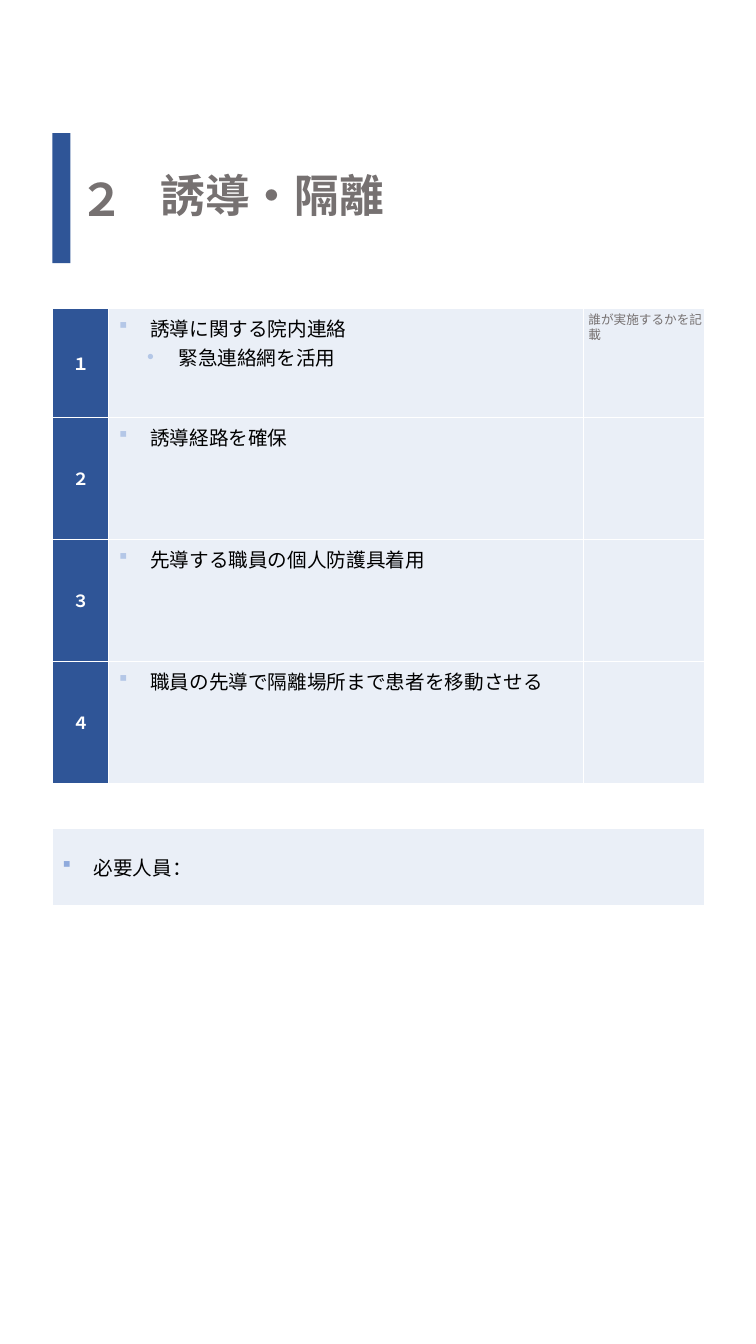
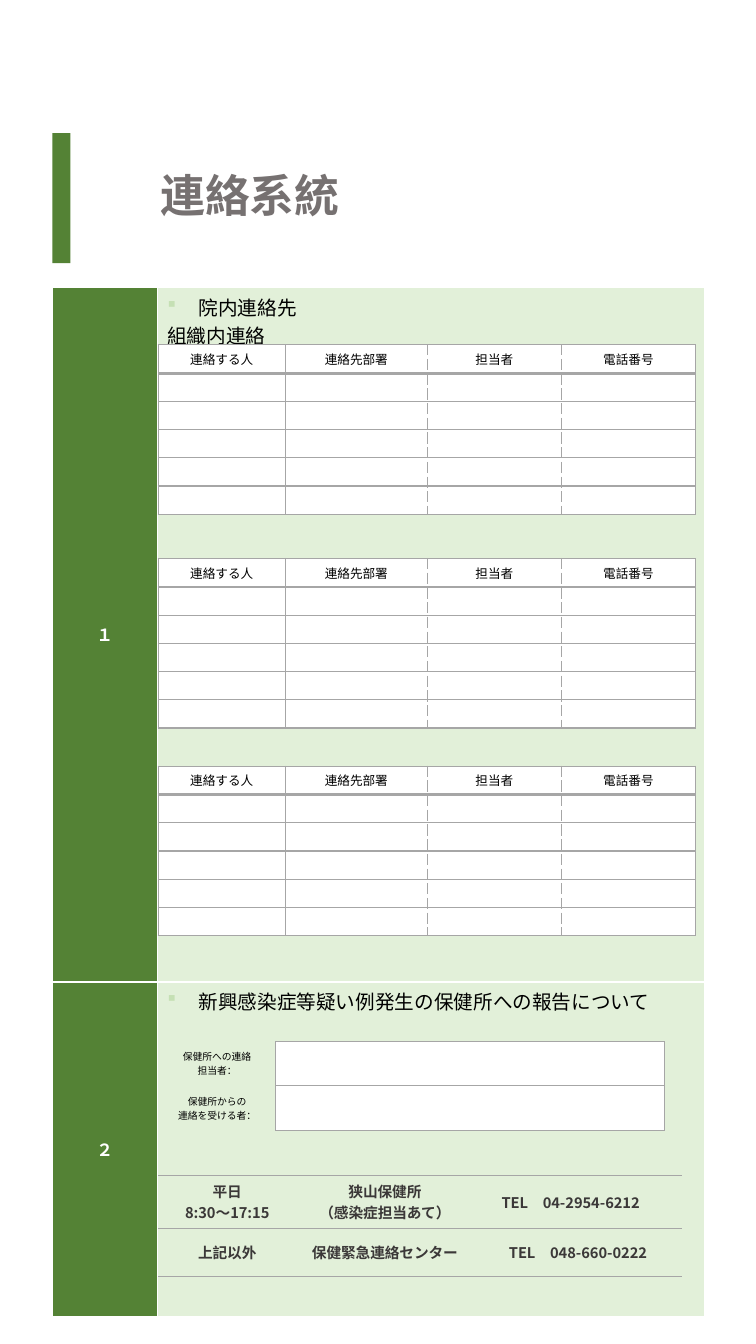
import itertools

import pptx
import pptx.dml.color
import pptx.enum.shapes
import pptx.enum.text
import pptx.oxml
import pptx.oxml.ns
import pptx.util

FONT = "Noto Sans CJK JP"
PAGE_W, PAGE_H = 7.5, 13.33
COLORS = {
    "white": "FFFFFF", "black": "000000", "heading": "767171", "office": "3B3838",
    "rule": "A6A6A6", "blue": "2F5597", "blue_pale": "EAEFF7", "blue_bullet": "B4C7E7",
    "staff_bullet": "8FAADC", "green": "548235", "green_pale": "E2F0D9",
    "green_bullet": "C5E0B4",
}
NO_STYLE = "{2D5ABB26-0587-4C30-8999-92F81FD0307C}"
SQUARE = ("§", "Wingdings", 0)
DOT = ("•", "Arial", 1)
LEFT = pptx.enum.text.PP_ALIGN.LEFT
CENTER = pptx.enum.text.PP_ALIGN.CENTER
TOP = pptx.enum.text.MSO_ANCHOR.TOP
MIDDLE = pptx.enum.text.MSO_ANCHOR.MIDDLE
CONTACT_HEADS = ("連絡する人", "連絡先部署", "担当者", "電話番号")
BLANK_CONTACTS = 5


def color(name):
    return pptx.dml.color.RGBColor.from_string(COLORS[name])


def inside(box, left, top, width, height):
    x, y, w, h = box
    return (x + w * left / 100, y + h * top / 100, w * width / 100, h * height / 100)


def emu(box):
    return [pptx.util.Inches(length) for length in box]


def add_xml(parent, tag, **attributes):
    child = pptx.oxml.parse_xml(f"<a:{tag} {pptx.oxml.ns.nsdecls('a')}/>")
    for key, value in attributes.items():
        child.set(key, str(value))
    parent.append(child)
    return child


def add_bullet(paragraph, bullet, tint):
    char, face, level = bullet
    paragraph.level = level
    props = paragraph._p.get_or_add_pPr()
    props.set("marL", str(pptx.util.Inches(0.31 + 0.28 * level)))
    props.set("indent", str(pptx.util.Inches(-0.31)))
    add_xml(add_xml(props, "buClr"), "srgbClr", val=COLORS[tint])
    add_xml(props, "buFont", typeface=face)
    add_xml(props, "buChar", char=char)


def write(frame, *lines, size=14, ink="black", bold=False, align=LEFT,
          bullets=(), tint=None, spacing=None):
    frame.word_wrap = True
    for index, (line, bullet) in enumerate(itertools.zip_longest(lines, bullets)):
        paragraph = frame.add_paragraph() if index else frame.paragraphs[0]
        paragraph.alignment = align
        if spacing:
            paragraph.line_spacing = spacing
        if bullet:
            add_bullet(paragraph, bullet, tint)
        if not line:
            paragraph._p.get_or_add_endParaRPr().set("sz", str(size * 100))
            continue
        run = paragraph.add_run()
        run.text = line
        run.font.size = pptx.util.Pt(size)
        run.font.bold = bold
        run.font.name = FONT
        run.font.color.rgb = color(ink)
        add_xml(run._r.get_or_add_rPr(), "ea", typeface=FONT)


def rule_cell(cell, **sides):
    props = cell._tc.get_or_add_tcPr()
    for index, side in enumerate(side for side in "LRTB" if side in sides):
        ink, width, dash = sides[side]
        line = add_xml(props, "ln" + side, w=pptx.util.Pt(width))
        add_xml(add_xml(line, "solidFill"), "srgbClr", val=COLORS[ink])
        add_xml(line, "prstDash", val=dash)
        props.insert(index, line)


def fill_cell(cell, *lines, fill=None, anchor=TOP, sides=None, **style):
    cell.vertical_anchor = anchor
    if fill:
        cell.fill.solid()
        cell.fill.fore_color.rgb = color(fill)
    else:
        cell.fill.background()
    write(cell.text_frame, *(lines or ("",)), **style)
    rule_cell(cell, **(sides or {}))


def add_grid(slide, box, columns, rows):
    table = slide.shapes.add_table(len(rows), len(columns), *emu(box)).table
    table.first_row = table.horz_banding = False
    table._tbl.tblPr.find(pptx.oxml.ns.qn("a:tableStyleId")).text = NO_STYLE
    for column, share in zip(table.columns, columns):
        column.width = pptx.util.Inches(box[2] * share / sum(columns))
    for row, share in zip(table.rows, rows):
        row.height = pptx.util.Inches(box[3] * share / sum(rows))
    return table


def all_sides(ink, width):
    return dict.fromkeys("LRTB", (ink, width, "solid"))


def add_heading(slide, box, title, accent, number=None):
    heading = slide.shapes.title
    heading.left, heading.top, heading.width, heading.height = emu(
        inside(box, 14.99, 1.55, 85.01, 96.12))
    frame = heading.text_frame
    frame.auto_size = pptx.enum.text.MSO_AUTO_SIZE.NONE
    frame.vertical_anchor = MIDDLE
    style = dict(size=32, ink="heading", bold=True)
    write(frame, title, spacing=0.9, **style)
    bar = slide.shapes.add_shape(pptx.enum.shapes.MSO_SHAPE.RECTANGLE,
                                 *emu(inside(box, 0, 0, 2.78, 100)))
    bar.shadow.inherit = False
    bar.fill.solid()
    bar.fill.fore_color.rgb = color(accent)
    bar.line.fill.background()
    if number:
        marker = slide.shapes.add_textbox(*emu(inside(box, 2.63, 25.58, 10.2, 49.61)))
        write(marker.text_frame, number, **style)


def add_steps(slide, box, steps, columns, rows, theme):
    table = add_grid(slide, box, columns, rows)
    sides = all_sides("white", 1)
    for index, (number, lines, bullets) in enumerate(steps):
        fill_cell(table.cell(index, 0), number, fill=theme, anchor=MIDDLE, sides=sides,
                  size=12, ink="white", bold=True, align=CENTER)
        fill_cell(table.cell(index, 1), *lines, fill=theme + "_pale", sides=sides,
                  bullets=bullets, tint=theme + "_bullet")
        for spare in range(2, len(columns)):
            fill_cell(table.cell(index, spare), fill=theme + "_pale", sides=sides)


def add_role_note(slide, box):
    note = slide.shapes.add_textbox(*emu(box))
    write(note.text_frame, "誰が実施するかを記載", size=9, ink="heading")


def add_staffing(slide, box):
    table = add_grid(slide, box, (1,), (1,))
    fill_cell(table.cell(0, 0), "必要人員：", fill="blue_pale", anchor=MIDDLE,
              sides=all_sides("white", 1), bullets=(SQUARE,), tint="staff_bullet")


def add_contacts(slide, box):
    table = add_grid(slide, box, (1.26, 1.41, 1.33, 1.33), (1,) * (BLANK_CONTACTS + 1))
    thin, thick, dashed = (("rule", 1, "solid"), ("rule", 2.25, "solid"),
                           ("rule", 1, "sysDash"))
    uprights = (thin, thin, dashed, dashed, thin)
    levels = (thin, thick) + (thin,) * BLANK_CONTACTS
    for row in range(BLANK_CONTACTS + 1):
        for column, head in enumerate(CONTACT_HEADS):
            fill_cell(table.cell(row, column), "" if row else head, fill="white",
                      size=9, align=CENTER,
                      sides={"L": uprights[column], "R": uprights[column + 1],
                             "T": levels[row], "B": levels[row + 1]})


def add_assignees(slide, box):
    roles = (("保健所への連絡", "担当者："), ("保健所からの", "連絡を受ける者："))
    table = add_grid(slide, box, (1.17, 3.86), (1, 1))
    for row, role in enumerate(roles):
        fill_cell(table.cell(row, 0), *role, anchor=MIDDLE, size=7, align=CENTER)
        fill_cell(table.cell(row, 1), fill="white", size=7,
                  sides=all_sides("rule", 0.75))


def add_offices(slide, box):
    offices = (
        (("平日", "8:30～17:15"), ("狭山保健所", "（感染症担当あて）"), ("TEL　04-2954-6212　",)),
        (("上記以外",), ("保健緊急連絡センター",), ("TEL　048-660-0222",)),
    )
    outer, inner = ("rule", 1, "solid"), ("rule", 0.75, "solid")
    levels = (outer, inner, outer)
    table = add_grid(slide, box, (1.37, 1.76, 2.07), (0.52, 0.48))
    for row, office in enumerate(offices):
        for column, lines in enumerate(office):
            fill_cell(table.cell(row, column), *lines, anchor=MIDDLE, size=10.5,
                      ink="office", bold=True, align=CENTER,
                      sides={"T": levels[row], "B": levels[row + 1]})


def build_guidance(slide, body, heading):
    add_heading(slide, heading, "誘導・隔離", "blue", number="２")
    steps = (
        ("１", ("誘導に関する院内連絡", "緊急連絡網を活用"), (SQUARE, DOT)),
        ("２", ("誘導経路を確保",), (SQUARE,)),
        ("３", ("先導する職員の個人防護具着用",), (SQUARE,)),
        ("４", ("職員の先導で隔離場所まで患者を移動させる",), (SQUARE,)),
    )
    procedure = inside(body, 0, 22.96, 100, 35.33)
    add_steps(slide, procedure, steps, (0.56, 4.7, 1.2), (1.08, 1.21, 1.21, 1.21), "blue")
    add_staffing(slide, inside(body, 0, 61.67, 100, 5.7))
    add_role_note(slide, inside(procedure, 80.68, -0.42, 20.56, 5.31))


def build_contact_tree(slide, body, heading):
    add_heading(slide, heading, "連絡系統", "green")
    steps = (
        ("１", ("院内連絡先", "組織内連絡"), (SQUARE,)),
        ("２", ("新興感染症等疑い例発生の保健所への報告について",), (SQUARE,)),
    )
    frame = inside(body, 0, 21.38, 100, 76.59)
    add_steps(slide, frame, steps, (1.04, 5.43), (6.89, 3.32), "green")
    for top in (5.58, 26.35, 46.52):
        add_contacts(slide, inside(frame, 16.23, top, 82.38, 16.45))
    add_assignees(slide, inside(frame, 16.23, 73.26, 77.59, 8.62))
    add_offices(slide, inside(frame, 16.23, 86.29, 80.37, 9.79))


def main():
    deck = pptx.Presentation()
    deck.slide_width = pptx.util.Inches(PAGE_W)
    deck.slide_height = pptx.util.Inches(PAGE_H)
    body = inside((0, 0, PAGE_W, PAGE_H), 6.93, 0, 86.27, 100)
    heading = inside(body, 0, 9.9, 100, 9.68)
    for build in (build_guidance, build_contact_tree):
        build(deck.slides.add_slide(deck.slide_layouts[5]), body, heading)
    deck.save("out.pptx")


if __name__ == "__main__":
    main()
